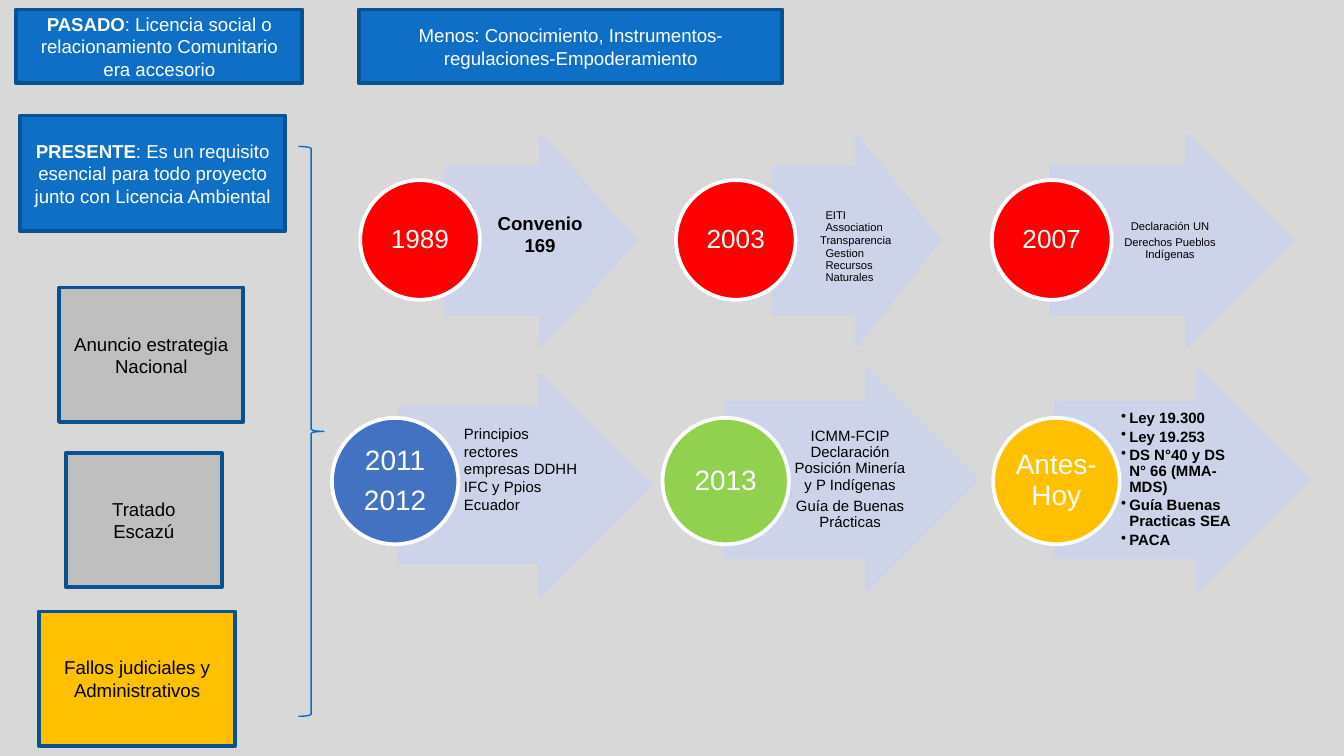
from dataclasses import dataclass

from lxml import etree
from pptx import Presentation
from pptx.dml.color import RGBColor
from pptx.enum.shapes import MSO_SHAPE
from pptx.enum.text import MSO_ANCHOR, PP_ALIGN
from pptx.oxml.ns import qn
from pptx.util import Emu, Inches, Pt

RECT, OVAL = MSO_SHAPE.RECTANGLE, MSO_SHAPE.OVAL
ARROW, BRACE = MSO_SHAPE.RIGHT_ARROW, MSO_SHAPE.RIGHT_BRACE
LEFT, MID = PP_ALIGN.LEFT, PP_ALIGN.CENTER
CELL = 0.1  # grid: one column or row, in inches


@dataclass(frozen=True)
class Theme:
    font: str = "Arial"
    back: str = "D8D8D8"
    blue: str = "0F6FC6"
    edge: str = "0A5190"
    brace: str = "096CC5"
    arrow: str = "CCD3EA"
    grey: str = "BFBFBF"
    red: str = "FF0000"
    navy: str = "4372C3"
    green: str = "92D050"
    gold: str = "FFC000"
    white: str = "FFFFFF"
    black: str = "000000"
    tiny: float = 6
    small: float = 8
    base: float = 10
    thin: float = 0.75
    thick: float = 2


T = Theme()


@dataclass(frozen=True)
class Area:
    """Columns and rows on the grid."""
    col: float
    row: float
    wide: float
    high: float


@dataclass(frozen=True)
class Style:
    size: float
    ink: str = T.black
    bold: bool = False
    align: int = MID
    space: float = 0.9
    gap: float = 0
    hang: tuple = ()  # first-line indent of each paragraph
    bullet: bool = False


@dataclass(frozen=True)
class Box:
    area: Area
    fill: str
    ink: str
    text: str
    lead: str = ""


@dataclass(frozen=True)
class Step:
    year: str
    fill: str
    col: float  # arrow
    wide: float
    text: str
    style: Style
    shift: float = 0  # rows the text moves down
    drop: float = 0  # rows the arrow moves down


@dataclass(frozen=True)
class Lane:
    col: float  # first disc
    pitch: float
    row: float
    disc: float
    top: float  # arrows
    high: float
    size: float
    steps: tuple


def cells(n: float) -> Emu:
    return Inches(n * CELL)


def place(area: Area) -> tuple:
    return tuple(cells(n) for n in (area.col, area.row, area.wide, area.high))


def rgb(code: str) -> RGBColor:
    return RGBColor.from_string(code)


def draw(slide, kind: int, area: Area, fill: str, line: str, width: float = T.thick):
    shape = slide.shapes.add_shape(kind, *place(area))
    shape.shadow.inherit = False
    if fill:
        shape.fill.solid()
        shape.fill.fore_color.rgb = rgb(fill)
    else:
        shape.fill.background()
    shape.line.color.rgb = rgb(line)
    shape.line.width = Pt(width)
    return shape


def write(shape, text: str, style: Style, inset: tuple, lead: str = "") -> None:
    frame = shape.text_frame
    frame.text = text
    frame.word_wrap = True
    frame.vertical_anchor = MSO_ANCHOR.MIDDLE
    frame.margin_left = frame.margin_right = cells(inset[0])
    frame.margin_top = frame.margin_bottom = cells(inset[1])
    if lead:
        para = frame.paragraphs[0]
        para.text = lead
        para.add_run().text = text
    for i, para in enumerate(frame.paragraphs):
        para.alignment = style.align
        para.line_spacing = style.space
        para.space_before = Pt(style.gap if i else 0)
        for run in para.runs:
            font = run.font
            font.name, font.size = T.font, Pt(style.size)
            font.bold = style.bold or run.text == lead
            font.color.rgb = rgb(style.ink)
        if style.hang:
            props = para._p.get_or_add_pPr()
            props.set("marL", str(cells(0.6)))
            props.set("indent", str(cells(style.hang[i])))
            if style.bullet:
                etree.SubElement(props, qn("a:buChar")).set("char", "•")


def add_box(slide, box: Box) -> None:
    shape = draw(slide, RECT, box.area, box.fill, T.edge)
    write(shape, box.text, Style(T.base, box.ink, space=1), (1, 0.5), box.lead)


def add_step(slide, lane: Lane, i: int, step: Step) -> None:
    # Arrow, slightly see-through
    top = lane.top + step.drop
    arrow = draw(slide, ARROW, Area(step.col, top, step.wide, lane.high), T.arrow, T.arrow)
    arrow.adjustments[0], arrow.adjustments[1] = 0.7, 0.5
    for tint in arrow._element.spPr.iter(qn("a:srgbClr")):
        etree.SubElement(tint, qn("a:alpha")).set("val", "90000")
    # Text over the middle of the arrow
    area = Area(step.col + step.wide / 4, top + lane.high * 0.15 + step.shift,
                step.wide * 0.49, lane.high * 0.7)
    write(slide.shapes.add_textbox(*place(area)), step.text, step.style, (0.15, 0.05))
    # Disc with the year
    area = Area(lane.col + i * lane.pitch, lane.row, lane.disc, lane.disc)
    disc = draw(slide, OVAL, area, step.fill, T.white)
    write(disc, step.year, Style(lane.size, T.white, gap=5.2), (0.1, 0.1))


BOXES = (
    Box(Area(1.2, 0.7, 21.3, 5.5), T.blue, T.white,
        ": Licencia social o relacionamiento Comunitario era accesorio", "PASADO"),
    Box(Area(26.7, 0.7, 31.5, 5.5), T.blue, T.white,
        "Menos: Conocimiento, Instrumentos-regulaciones-Empoderamiento"),
    Box(Area(1.5, 8.6, 19.7, 8.6), T.blue, T.white,
        ": Es un requisito esencial para todo proyecto junto con Licencia Ambiental", "PRESENTE"),
    Box(Area(4.4, 21.4, 13.7, 10), T.grey, T.black, "Anuncio estrategia Nacional"),
    Box(Area(4.9, 33.7, 11.6, 10), T.grey, T.black, "Tratado Escazú"),
    Box(Area(2.9, 45.5, 14.6, 10), T.gold, T.black, "Fallos judiciales y Administrativos"),
)

LANES = (
    Lane(26.8, 23.5, 13.4, 8.9, 10.1, 15.6, 14, (
        Step("1989", T.red, 33.2, 14.1, "Convenio 169",
             Style(T.base, bold=True, space=1), shift=-0.5),
        Step("2003", T.red, 57.6, 12.3,
             "EITI Association\nTransparencia Gestion Recursos Naturales",
             Style(T.tiny, align=LEFT, gap=0.9, hang=(0, -0.4)), shift=0.45),
        Step("2007", T.red, 78.2, 17.9, "Declaración UN\nDerechos Pueblos Indígenas",
             Style(T.tiny, gap=2.1)),
    )),
    Lane(24.7, 24.6, 31.1, 9.4, 27.5, 16.4, 15, (
        Step("2011\n2012", T.navy, 29.7, 18.7,
             "Principios rectores empresas DDHH\nIFC y Ppios Ecuador",
             Style(T.small, align=LEFT, space=1), shift=-1.2, drop=0.4),
        Step("2013", T.green, 54, 18.7,
             "ICMM-FCIP Declaración Posición Minería y P Indígenas\nGuía de Buenas Prácticas",
             Style(T.small, gap=2.8)),
        Step("Antes-Hoy", T.gold, 78.6, 18.7,
             "Ley 19.300\nLey 19.253\nDS N°40 y DS N° 66 (MMA-MDS)\n"
             "Guía Buenas Practicas SEA\nPACA",
             Style(T.small, bold=True, align=LEFT, gap=1.2, hang=(-0.6,) * 5, bullet=True)),
    )),
)


def main() -> None:
    deck = Presentation()
    deck.slide_width, deck.slide_height = cells(100), cells(56.25)
    slide = deck.slides.add_slide(deck.slide_layouts[6])
    slide.background.fill.solid()
    slide.background.fill.fore_color.rgb = rgb(T.back)

    # Past and present on the left
    for box in BOXES:
        add_box(slide, box)

    # Two lanes of milestones
    for lane in LANES:
        for i, step in enumerate(lane.steps):
            add_step(slide, lane, i, step)

    # Brace between boxes and lanes
    brace = draw(slide, BRACE, Area(22.2, 10.9, 1.9, 42.4), "", T.brace, T.thin)
    brace.adjustments[0], brace.adjustments[1] = 0.08, 0.5

    deck.save("out.pptx")


if __name__ == "__main__":
    main()
